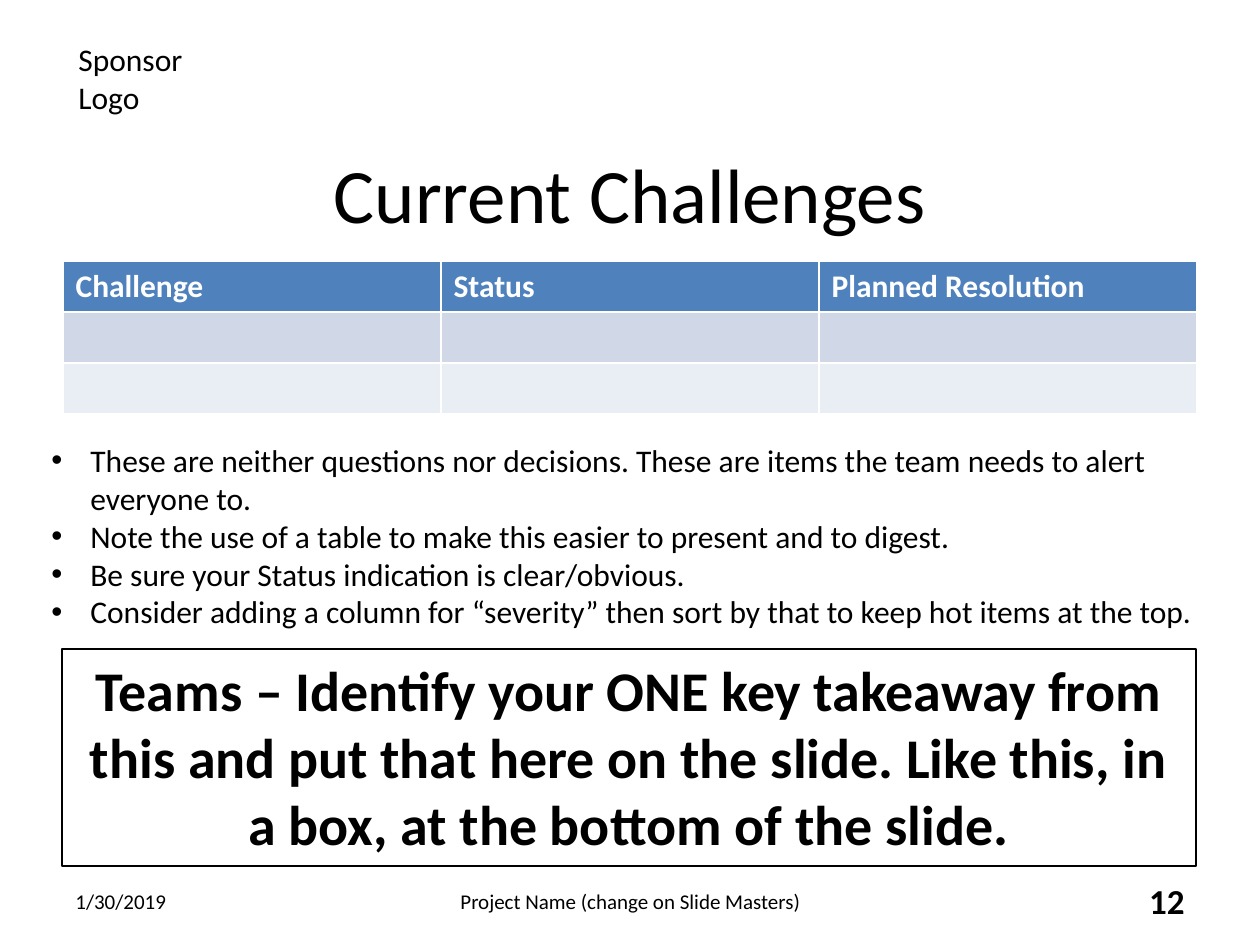
"""Build the Current Challenges slide with its table, tips and takeaway box."""
from lxml.etree import SubElement
from pptx import Presentation
from pptx.dml.color import RGBColor
from pptx.enum.shapes import MSO_SHAPE
from pptx.enum.text import MSO_ANCHOR, PP_ALIGN
from pptx.oxml.ns import qn
from pptx.util import Emu, Pt

FONT = "Calibri"
BLACK = RGBColor(0x00, 0x00, 0x00)
WHITE = RGBColor(0xFF, 0xFF, 0xFF)
ROW_FILLS = [
    RGBColor(0x4F, 0x81, 0xBD),
    RGBColor(0xD0, 0xD8, 0xE8),
    RGBColor(0xE9, 0xED, 0xF4),
]

TITLE = "Current Challenges"
SPONSOR = ["Sponsor", "Logo"]
HEADERS = ["Challenge", "Status", "Planned Resolution"]
TIPS = [
    "These are neither questions nor decisions. These are items the team needs to alert everyone to.",
    "Note the use of a table to make this easier to present and to digest.",
    "Be sure your Status indication is clear/obvious.",
    "Consider adding a column for “severity” then sort by that to keep hot items at the top.",
]
TAKEAWAY = (
    "Teams – Identify your ONE key takeaway from this and put that here on the slide. "
    "Like this, in a box, at the bottom of the slide."
)
FOOTERS = [
    ("1/30/2019", 63, 294, PP_ALIGN.LEFT, 12, False),
    ("Project Name (change on Slide Masters)", 431, 399, PP_ALIGN.CENTER, 12, False),
    ("12", 903, 294, PP_ALIGN.RIGHT, 20, True),
]

LEFT, WIDTH = 63, 1134
ROW_H = 51
FOOTER_TOP, FOOTER_H = 876, 50
INDENT = 39


def px(n):
    return Emu(round(n * 914400 / 126))


def box(*lengths):
    return [px(n) for n in lengths]


def add_run(p, text, size, color=BLACK, bold=False):
    r = p.add_run()
    r.text = text
    r.font.name = FONT
    r.font.size = Pt(size)
    r.font.bold = bold
    r.font.color.rgb = color


def add_text_box(slide, *lengths):
    tf = slide.shapes.add_textbox(*box(*lengths)).text_frame
    tf.word_wrap = True
    return tf


def set_bullet(p):
    pPr = p._p.get_or_add_pPr()
    pPr.set("marL", str(px(INDENT)))
    pPr.set("indent", str(-px(INDENT)))
    SubElement(pPr, qn("a:buFont")).set("typeface", "Arial")
    SubElement(pPr, qn("a:buChar")).set("char", "•")


def add_title(slide):
    sp = slide.shapes.title
    sp.left, sp.top, sp.width, sp.height = box(LEFT, 141, WIDTH, 103)
    sp.text_frame.vertical_anchor = MSO_ANCHOR.MIDDLE
    p = sp.text_frame.paragraphs[0]
    p.alignment = PP_ALIGN.CENTER
    add_run(p, TITLE, 44)


def add_sponsor(slide):
    p = add_text_box(slide, 66, 34, 193, 89).paragraphs[0]
    for i, line in enumerate(SPONSOR):
        if i:
            p.add_line_break()
        add_run(p, line, 18)


def add_challenges(slide):
    rows, cols = len(ROW_FILLS), len(HEADERS)
    frame = slide.shapes.add_table(rows, cols, *box(LEFT, 261, WIDTH, rows * ROW_H))
    table = frame.table
    for row, color in zip(table.rows, ROW_FILLS):
        row.height = px(ROW_H)
        for cell in row.cells:
            cell.fill.solid()
            cell.fill.fore_color.rgb = color
    for col, header in enumerate(HEADERS):
        table.columns[col].width = px(WIDTH // cols)
        add_run(table.cell(0, col).text_frame.paragraphs[0], header, 18, WHITE, True)


def add_tips(slide):
    tf = add_text_box(slide, 39, 435, 1181, 204)
    for i, tip in enumerate(TIPS):
        p = tf.add_paragraph() if i else tf.paragraphs[0]
        set_bullet(p)
        add_run(p, tip, 18)


def add_takeaway(slide):
    sp = slide.shapes.add_shape(MSO_SHAPE.RECTANGLE, *box(62, 649, WIDTH, 217))
    sp.shadow.inherit = False
    sp.fill.background()
    sp.line.color.rgb = BLACK
    sp.line.width = Pt(0.75)
    tf = sp.text_frame
    tf.word_wrap = True
    tf.vertical_anchor = MSO_ANCHOR.TOP
    p = tf.paragraphs[0]
    p.alignment = PP_ALIGN.CENTER
    add_run(p, TAKEAWAY, 32, bold=True)


def add_footers(slide):
    for text, left, width, align, size, bold in FOOTERS:
        tf = add_text_box(slide, left, FOOTER_TOP, width, FOOTER_H)
        tf.vertical_anchor = MSO_ANCHOR.MIDDLE
        p = tf.paragraphs[0]
        p.alignment = align
        add_run(p, text, size, bold=bold)


def main():
    prs = Presentation()
    prs.slide_width, prs.slide_height = px(1260), px(945)
    slide = prs.slides.add_slide(prs.slide_layouts[5])
    add_sponsor(slide)
    add_challenges(slide)
    add_title(slide)
    add_footers(slide)
    add_tips(slide)
    add_takeaway(slide)
    prs.save("out.pptx")


if __name__ == "__main__":
    main()
